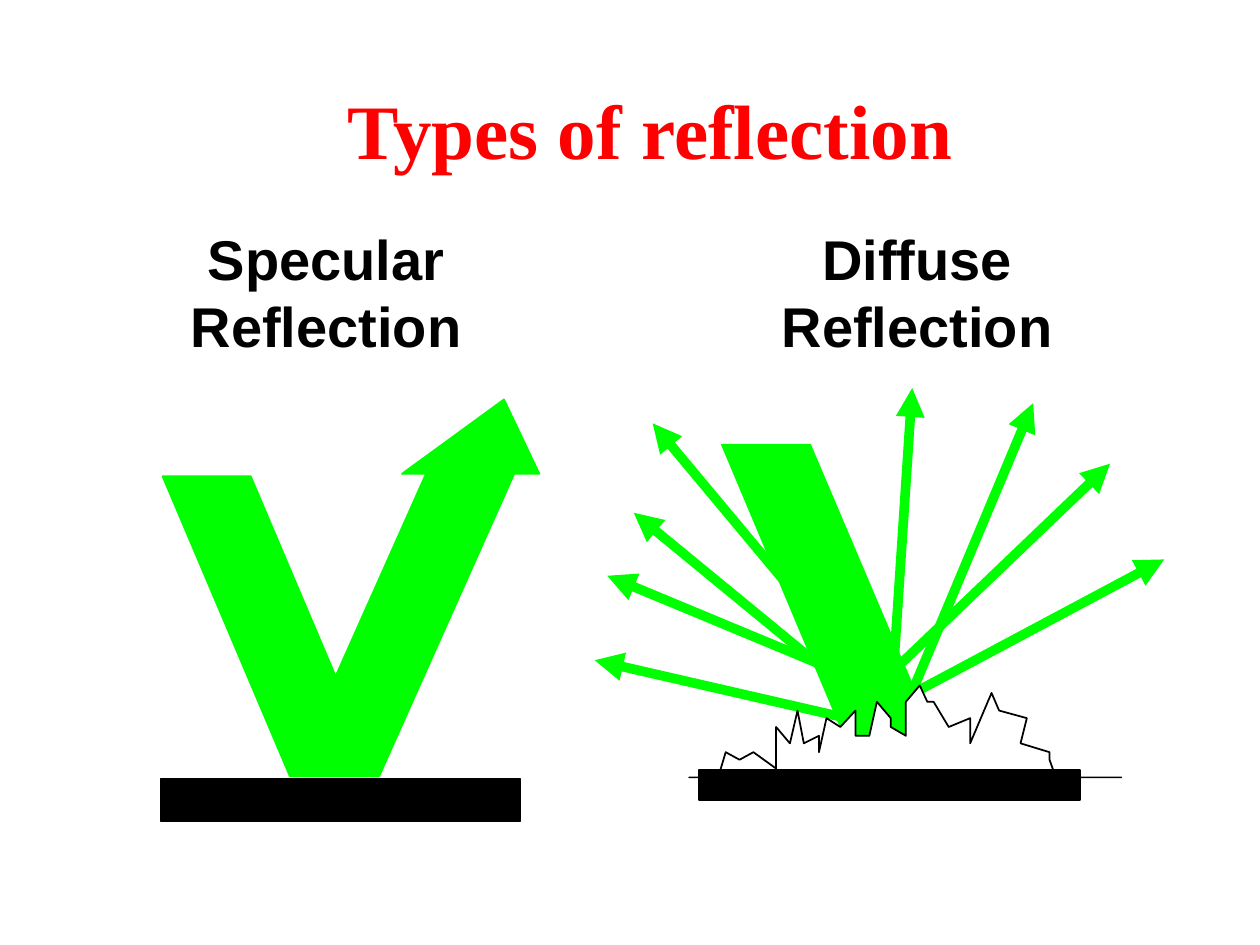
from lxml import etree
from pptx import Presentation
from pptx.dml.color import RGBColor
from pptx.enum.shapes import MSO_CONNECTOR, MSO_SHAPE
from pptx.enum.text import MSO_ANCHOR, PP_ALIGN
from pptx.oxml.ns import qn
from pptx.util import Inches, Pt

STRAIGHT = MSO_CONNECTOR.STRAIGHT
RECTANGLE = MSO_SHAPE.RECTANGLE
MIDDLE, TOP = MSO_ANCHOR.MIDDLE, MSO_ANCHOR.TOP
CENTER = PP_ALIGN.CENTER

BLACK = RGBColor(0x00, 0x00, 0x00)
WHITE = RGBColor(0xFF, 0xFF, 0xFF)
GREEN = RGBColor(0x00, 0xFF, 0x00)
RED = RGBColor(0xFF, 0x00, 0x00)

LABELS = [(1.41, "Specular"), (6.1, "Diffuse")]
RAYS = [
    ((6.76, 5.64), (8.81, 3.68)),
    ((7.07, 5.64), (7.24, 3.08)),
    ((7.14, 5.56), (9.24, 4.44)),
    ((7.21, 5.56), (8.2, 3.2)),
    ((6.95, 5.48), (5.18, 3.36)),
    ((7.3, 5.6), (4.82, 4.57)),
    ((6.81, 5.72), (4.72, 5.24)),
    ((6.99, 5.68), (5.03, 4.07)),
]
DIFFUSE_BEAM = [(7.45, 5.93), (6.74, 5.93), (5.73, 3.53), (6.43, 3.53)]
SPECULAR_BEAMS = [
    [(3, 6.16), (2.3, 6.16), (1.29, 3.78), (1.99, 3.78)],
    [(4, 3.17), (3.19, 3.76), (4.28, 3.76)],
    [(2.31, 6.16), (3.39, 3.74), (4.09, 3.74), (3.01, 6.16)],
]
ROUGH_SURFACE = [
    (5.47, 6.17), (5.7, 6.17), (5.76, 5.97), (5.87, 6.03), (5.98, 5.97),
    (6.16, 6.1), (6.16, 5.77), (6.27, 5.9), (6.33, 5.64), (6.38, 5.9),
    (6.5, 5.84), (6.5, 5.97), (6.56, 5.7), (6.67, 5.77), (6.79, 5.64),
    (6.79, 5.84), (6.9, 5.84), (6.96, 5.57), (7.07, 5.7), (7.07, 5.77),
    (7.19, 5.84), (7.19, 5.57), (7.3, 5.44), (7.36, 5.57), (7.41, 5.57),
    (7.53, 5.77), (7.7, 5.7), (7.7, 5.9), (7.87, 5.5), (7.93, 5.64),
    (8.15, 5.7), (8.1, 5.9), (8.33, 5.97), (8.33, 6.03), (8.38, 6.17),
    (8.9, 6.17),
]


class ReflectionSlide:
    """Draws styled elements on one slide."""

    def __init__(self, slide):
        self.shapes = slide.shapes
        self.outline = Pt(1)
        self.ray_width = Pt(5.5)

    def paint(self, sp, fill, line):
        sp.shadow.inherit = False
        sp.fill.solid()
        sp.fill.fore_color.rgb = fill
        sp.line.color.rgb = line
        sp.line.width = self.outline

    def text(self, box, lines, font, size, color, wrap, anchor):
        tf = self.shapes.add_textbox(*map(Inches, box)).text_frame
        tf.word_wrap = wrap
        tf.vertical_anchor = anchor
        tf.text = "\n".join(lines)
        for p in tf.paragraphs:
            p.alignment = CENTER
            p.font.name = font
            p.font.size = Pt(size)
            p.font.bold = True
            p.font.color.rgb = color

    def polygon(self, points, fill, line):
        start, *rest = [(Inches(x), Inches(y)) for x, y in points]
        builder = self.shapes.build_freeform(*start)
        builder.add_line_segments(rest, close=True)
        self.paint(builder.convert_to_shape(), fill, line)

    def bar(self, *box):
        sp = self.shapes.add_shape(RECTANGLE, *map(Inches, box))
        self.paint(sp, BLACK, BLACK)

    def ray(self, start, tip):
        ends = [Inches(v) for v in (*start, *tip)]
        sp = self.shapes.add_connector(STRAIGHT, *ends)
        sp.line.color.rgb = GREEN
        sp.line.width = self.ray_width
        ln = sp.line._get_or_add_ln()
        ln.set("cap", "rnd")
        etree.SubElement(ln, qn("a:round"))
        etree.SubElement(ln, qn("a:tailEnd"), type="triangle", w="med", len="med")
        etree.SubElement(sp._element.spPr, qn("a:effectLst"))


def main():
    prs = Presentation()
    prs.slide_width, prs.slide_height = Inches(10), Inches(7.5)
    s = ReflectionSlide(prs.slides.add_slide(prs.slide_layouts[6]))

    for left, kind in LABELS:
        s.text((left, 1.73, 2.36, 1.18), (kind, "Reflection"),
               "Arial", 32, BLACK, False, TOP)

    s.polygon(DIFFUSE_BEAM, GREEN, GREEN)
    for start, tip in RAYS:
        s.ray(start, tip)
    for points in SPECULAR_BEAMS:
        s.polygon(points, GREEN, GREEN)

    s.bar(1.28, 6.18, 2.85, 0.34)
    s.polygon(ROUGH_SURFACE, WHITE, BLACK)
    s.bar(5.55, 6.11, 3.02, 0.24)

    s.text((2.64, 0.6, 5.04, 0.84), ("Types of reflection",),
           "Times New Roman", 44, RED, True, MIDDLE)
    prs.save("out.pptx")


if __name__ == "__main__":
    main()
